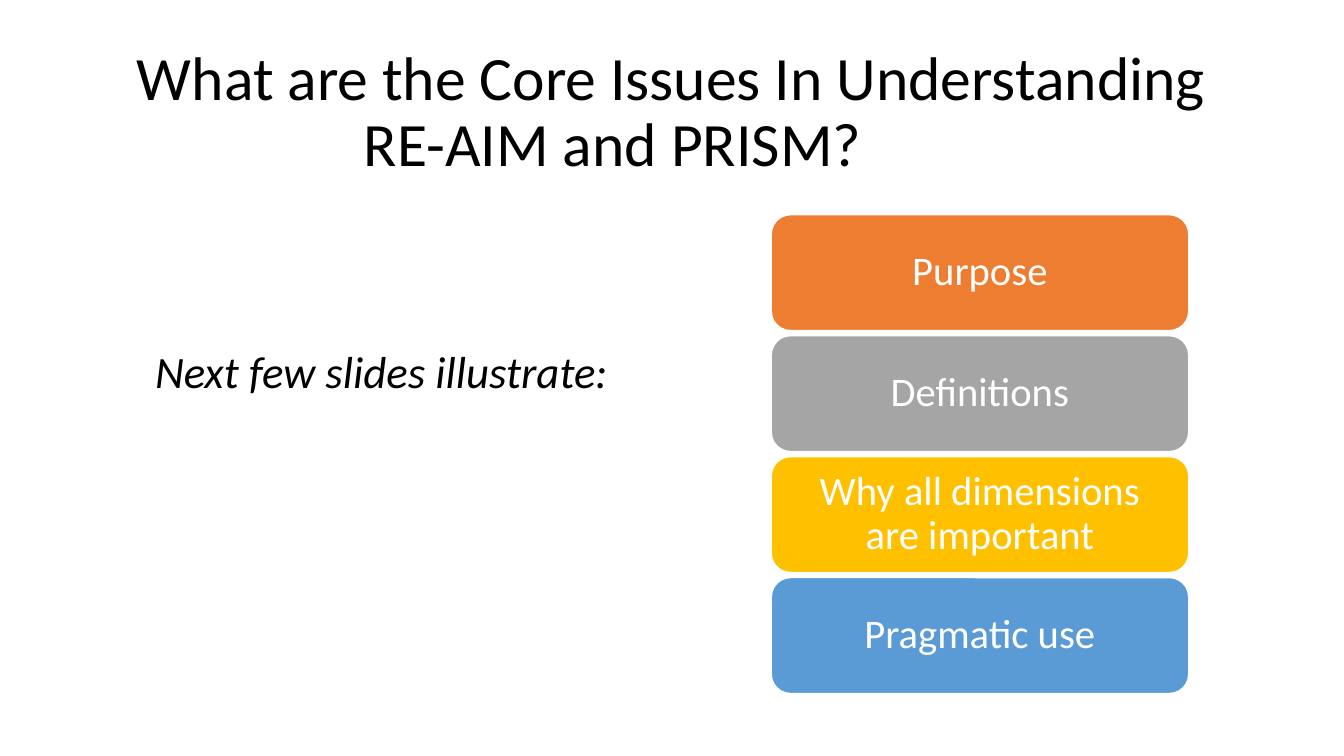
from dataclasses import dataclass

from pptx import Presentation
from pptx.dml.color import RGBColor
from pptx.enum import shapes, text
from pptx.util import Inches, Pt


@dataclass(frozen=True)
class Theme:
    font: str = "Calibri"
    ink: str = "000000"
    light: str = "FFFFFF"
    title: int = 44
    lead: int = 32
    card: int = 29


THEME = Theme()
ISSUES = [
    ("Purpose", "ED7D31"),
    ("Definitions", "A5A5A5"),
    ("Why all dimensions are important", "FFC000"),
    ("Pragmatic use", "5B9BD5"),
]
LEFT, TOP, WIDTH, HEIGHT, STEP = 7.65, 2.13, 4.14, 1.15, 1.2


def apply(item, values):
    for name, value in values.items():
        setattr(item, name, value)


def write(shape, words, size, color, frame=None, para=None, font=None):
    """Put one formatted paragraph in a shape and return it."""
    body = shape.text_frame
    apply(body, {"word_wrap": True, **(frame or {})})
    line = body.paragraphs[0]
    apply(line, para or {})
    run = line.add_run()
    run.text = words
    apply(run.font, {"name": THEME.font, "size": Pt(size), **(font or {})})
    run.font.color.rgb = RGBColor.from_string(color)
    return line


def add_text(slide, box, *args, **formats):
    shape = slide.shapes.add_textbox(*map(Inches, box))
    return write(shape, *args, **formats)


def add_title(slide, words):
    """Add a title whose second line hangs further right than the first."""
    line = add_text(
        slide, (0.92, 0.4, 11.5, 1.45), words, THEME.title, THEME.ink,
        frame={"vertical_anchor": text.MSO_ANCHOR.MIDDLE},
        para={"line_spacing": 0.9},
    )
    props = line._p.get_or_add_pPr()
    props.set("marL", str(Inches(2.59)))
    props.set("indent", str(Inches(-2.25)))


def add_card(slide, top, words, color):
    card = slide.shapes.add_shape(
        shapes.MSO_SHAPE.ROUNDED_RECTANGLE,
        *map(Inches, (LEFT, top, WIDTH, HEIGHT)),
    )
    card.shadow.inherit = False
    card.fill.solid()
    card.fill.fore_color.rgb = RGBColor.from_string(color)
    card.line.color.rgb = RGBColor.from_string(THEME.light)
    card.line.width = Pt(1)
    side, edge = Inches(0.12), Inches(0.06)
    write(
        card, words, THEME.card, THEME.light,
        frame={
            "vertical_anchor": text.MSO_ANCHOR.MIDDLE,
            "margin_left": side, "margin_right": side,
            "margin_top": edge, "margin_bottom": edge,
        },
        para={"alignment": text.PP_ALIGN.CENTER, "line_spacing": 0.9},
    )


def main():
    deck = Presentation()
    apply(deck, {"slide_width": Inches(13.33), "slide_height": Inches(7.5)})
    slide = deck.slides.add_slide(deck.slide_layouts[6])
    add_title(slide, "What are the Core Issues In Understanding RE-AIM and PRISM?")
    for row, (words, color) in enumerate(ISSUES):
        add_card(slide, TOP + row * STEP, words, color)
    add_text(
        slide, (1.44, 3.36, 4.74, 0.64), "Next few slides illustrate:",
        THEME.lead, THEME.ink, frame={"word_wrap": False},
        font={"italic": True},
    )
    deck.save("out.pptx")


if __name__ == "__main__":
    main()
